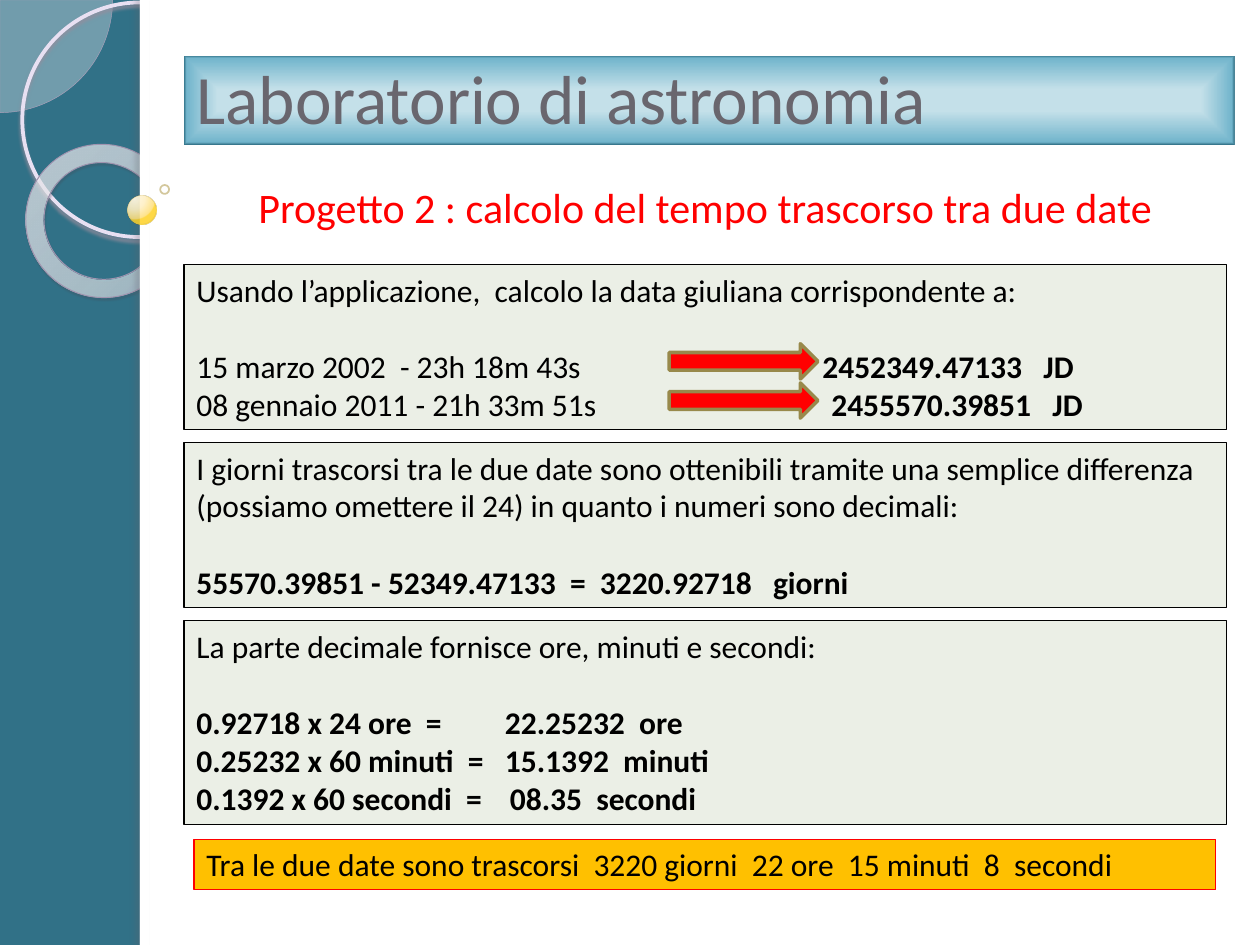
from dataclasses import dataclass
from typing import Any
from lxml import etree
from pptx import Presentation as Deck
from pptx.dml.color import RGBColor as Rgb
from pptx.enum.shapes import MSO_SHAPE as Geo
from pptx.enum.text import MSO_ANCHOR as Anchor, PP_ALIGN as Align
from pptx.oxml import parse_xml as make
from pptx.oxml.ns import nsdecls, qn
from pptx.util import Cm, Pt


@dataclass(frozen=True)
class Theme:
    font: str = "Calibri"
    head: float = 39.6
    sub: float = 24
    body: float = 18
    gap: float = 22
    deep: str = "317187"
    sky: str = "72B5CC"
    pale: str = "C4E0E9"
    white: str = "FFFFFF"
    black: str = "000000"
    red: str = "FF0000"
    gray: str = "69666E"
    sage: str = "EBEFE6"
    gold: str = "FFC000"
    olive: str = "98894B"
    sand: str = "B6A35A"
    brass: str = "CAB45C"
    mist: str = "F6F4F9"
    lilac: str = "ACA0B9"
    ring: str = "E8E0F2"
    edge: str = "A094AF"
    plum: str = "958D9D"
    dusk: str = "4A4550"
    smoke: str = "646068"
    glass: tuple = ((0, "F9F7FB", 70), (70, "FCFBFE", 55), (100, "B099CA", 60))
    bead: tuple = ((0, "FFF7E2", 95), (50, "FFF0C5", 90),
                   (95, "FFE07C", 88), (100, "FFD327", 85))


@dataclass
class Page:
    look: Theme
    slide: Any

    def fade(self, owner, alpha):
        if alpha < 100:
            node = owner.find(qn("a:solidFill")).find(qn("a:srgbClr"))
            etree.SubElement(node, qn("a:alpha"), val=str(alpha * 1000))

    def shape(self, kind, at, fill=None, line=None, width=0.75, alpha=100, clear=100):
        item = self.slide.shapes.add_shape(kind, *map(Cm, at))
        item.shadow.inherit = False
        props = item._element.spPr
        if fill:
            item.fill.solid()
            item.fill.fore_color.rgb = Rgb.from_string(fill)
            self.fade(props, alpha)
        else:
            item.fill.background()
        if line:
            item.line.color.rgb = Rgb.from_string(line)
            item.line.width = Pt(width)
            self.fade(props.find(qn("a:ln")), clear)
        else:
            item.line.fill.background()
        return item

    def blend(self, item, stops, shade, rect):
        marks = "".join(
            f'<a:gs pos="{pos * 1000}"><a:srgbClr val="{tone}">'
            f'<a:alpha val="{alpha * 1000}"/></a:srgbClr></a:gs>'
            for pos, tone, alpha in stops)
        sides = " ".join(f'{side}="{num * 1000}"' for side, num in zip("ltrb", rect))
        grad = make(f'<a:gradFill {nsdecls("a")} rotWithShape="1"><a:gsLst>{marks}'
                    f'</a:gsLst><a:path path="{shade}"><a:fillToRect {sides}/>'
                    f'</a:path></a:gradFill>')
        props = item._element.spPr
        props.replace(props.find(qn("a:solidFill")), grad)

    def shade(self, item, tone, alpha, blur, dist, angle):
        glow = make(f'<a:outerShdw {nsdecls("a")} blurRad="{Pt(blur)}" '
                    f'dist="{Pt(dist)}" dir="{angle * 60000}" algn="tl" '
                    f'rotWithShape="0"><a:srgbClr val="{tone}">'
                    f'<a:alpha val="{alpha * 1000}"/></a:srgbClr></a:outerShdw>')
        item._element.spPr.find(qn("a:effectLst")).append(glow)

    def text(self, item, lines, size, color, align=Align.LEFT, anchor=Anchor.TOP):
        frame = item.text_frame
        frame.word_wrap = True
        frame.vertical_anchor = anchor
        for num, (runs, gap, tab) in enumerate(lines):
            para = frame.add_paragraph() if num else frame.paragraphs[0]
            para.alignment = align
            if tab:
                stops = etree.SubElement(para._p.get_or_add_pPr(), qn("a:tabLst"))
                etree.SubElement(stops, qn("a:tab"), pos=str(Cm(tab)), algn="l")
            if gap:
                para.space_before = Pt(self.look.gap)
            for words, bold in runs:
                run = para.add_run()
                run.text = words
                run.font.name = self.look.font
                run.font.size = Pt(size)
                run.font.bold = bold
                run.font.color.rgb = Rgb.from_string(color)

    def label(self, at, words, size, color):
        box = self.slide.shapes.add_textbox(*map(Cm, at))
        self.text(box, [line(words)], size, color, Align.CENTER)

    def panel(self, at, lines, fill, edge):
        box = self.shape(Geo.RECTANGLE, at, fill, edge)
        self.text(box, lines, self.look.body, self.look.black)

    def title(self, at, words):
        look = self.look
        bar = self.shape(Geo.RECTANGLE, at, look.pale)
        self.blend(bar, [(24, look.pale, 100), (94, look.sky, 100),
                         (100, look.deep, 100)], "shape", (50, 50, 50, 50))
        self.text(bar, [line(words)], look.head, look.gray, anchor=Anchor.BOTTOM)

    def arrow(self, at):
        self.shape(Geo.RIGHT_ARROW, at, self.look.red, self.look.olive, 2)

    def decor(self):
        look = self.look
        back = self.slide.background.fill
        back.solid()
        back.fore_color.rgb = Rgb.from_string(look.deep)
        pie = self.shape(Geo.PIE, (-2.27, -2.27, 4.54, 4.54), look.mist,
                         look.lilac, 0.25, alpha=33)
        pie.adjustments[0], pie.adjustments[1] = 0, 54
        hoop = self.shape(Geo.OVAL, (0.45, 0.05, 4.73, 4.73), line=look.ring, width=2.15)
        self.shade(hoop, look.plum, 85, 2, 2, 90)
        donut = self.shape(Geo.DONUT, (0.51, 2.92, 3.12, 3.07), look.white, look.edge, 0.58)
        donut.adjustments[0] = 0.12
        donut.rotation = 38.6
        self.blend(donut, look.glass, "circle", (85, 100, 1000, 300))
        self.shade(donut, look.dusk, 35, 1, 1.2, 75)
        self.shape(Geo.RECTANGLE, (2.82, 0, 22.58, 19.05), look.white)
        strip = self.shape(Geo.RECTANGLE, (2.82, 0, 0.2, 19.05), look.white)
        self.shade(strip, look.smoke, 25, 3, 3, 180)
        bead = self.shape(Geo.OVAL, (2.57, 3.94, 0.58, 0.58), look.white,
                          look.brass, 0.16, clear=60)
        self.blend(bead, look.bead, "circle", (50, 50, 100, 125))
        self.shape(Geo.OVAL, (3.23, 3.73, 0.18, 0.18), line=look.sand, width=1, clear=60)


def line(*words, bold=False, gap=False, tab=0):
    runs = [(part, bold or num > 0) for num, part in enumerate(words)]
    return runs, gap, tab


def main():
    deck = Deck()
    deck.slide_width, deck.slide_height = Cm(25.4), Cm(19.05)
    look = Theme()
    page = Page(look, deck.slides.add_slide(deck.slide_layouts[6]))
    page.decor()

    left, wide = 3.71, 21.01
    page.title((left, 1.12, 21.18, 1.8), "Laboratorio di astronomia")
    page.label((left, 3.53, wide, 1.27),
               "Progetto 2 : calcolo del tempo trascorso tra due date", look.sub, look.red)

    panels = [
        (3.33, [
            line("Usando l’applicazione,  calcolo la data giuliana corrispondente a:"),
            line("15 marzo 2002  - 23h 18m 43s\t", "2452349.47133   JD", gap=True, tab=12.62),
            line("08 gennaio 2011 - 21h 33m 51s\t", "2455570.39851   JD", tab=12.8)]),
        (3.33, [
            line("I giorni trascorsi tra le due date sono ottenibili tramite una semplice "
                 "differenza (possiamo omettere il 24) in quanto i numeri sono decimali:"),
            line("55570.39851 - 52349.47133  =  3220.92718   giorni", bold=True, gap=True)]),
        (4.11, [
            line("La parte decimale fornisce ore, minuti e secondi:"),
            line("0.92718 x 24 ore  =\t22.25232  ore", bold=True, gap=True, tab=6.22),
            line("0.25232 x 60 minuti  =\t15.1392  minuti", bold=True, tab=6.22),
            line("0.1392 x 60 secondi  =\t08.35  secondi", bold=True, tab=6.32)]),
    ]
    top = 5.33
    for high, lines in panels:
        page.panel((left, top, wide, high), lines, look.sage, look.black)
        top += high + 0.26

    for row in range(2):
        page.arrow((13.49, 6.93 + 0.79 * row, 3, 0.71))

    page.panel((3.91, 16.92, 20.6, 1.02), [
        line("Tra le due date sono trascorsi  3220 giorni  22 ore  15 minuti  8  secondi")],
        look.gold, look.red)
    deck.save("out.pptx")


if __name__ == "__main__":
    main()
